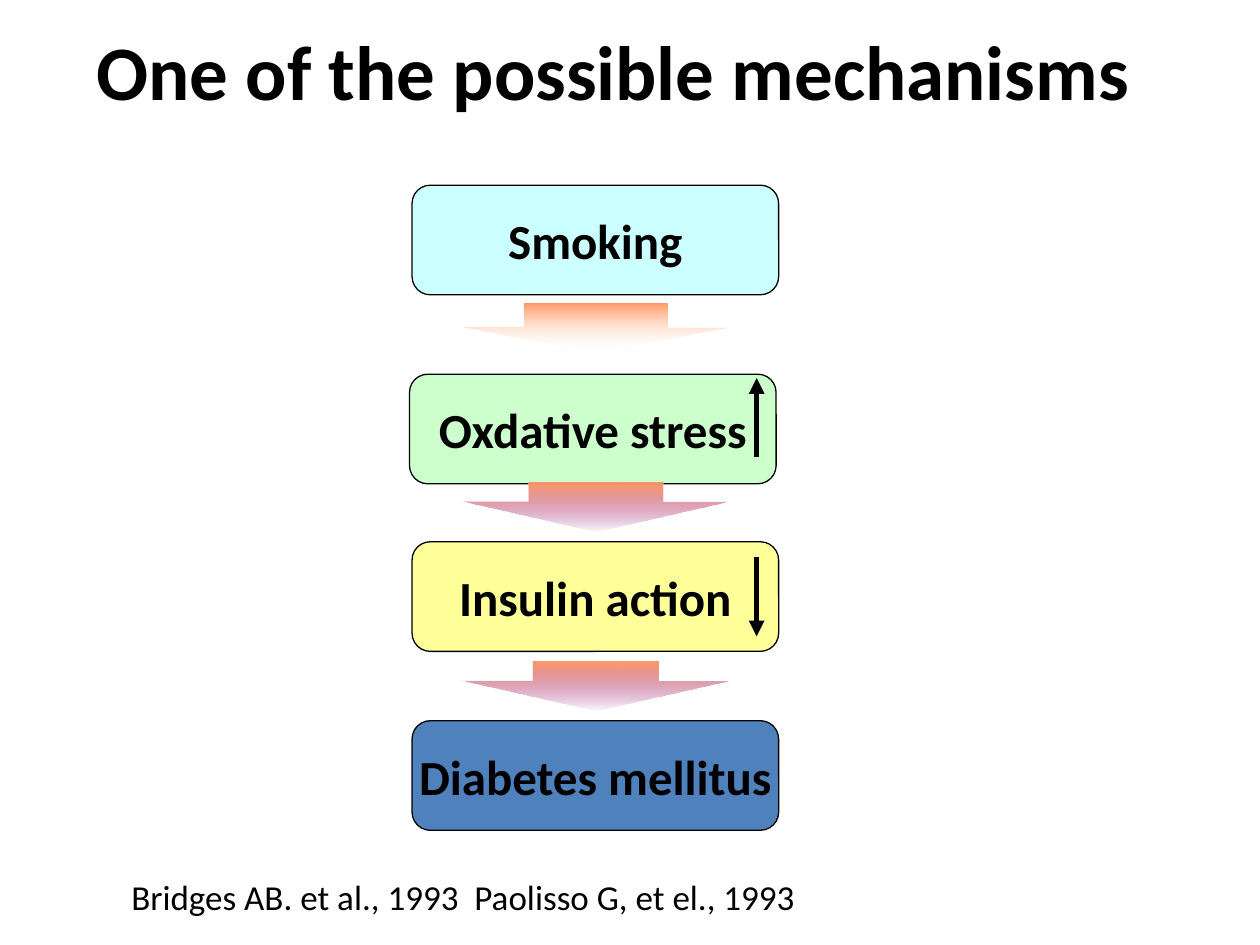
from pptx import Presentation, util as u
from pptx.dml.color import RGBColor
from pptx.enum import shapes, text
from pptx.oxml.ns import qn
from lxml import etree

W, H = 10, 7.5
COLORS = {
    "ink": "000000", "smoking": "CCFFFF", "stress": "CCFFCC", "insulin": "FFFF99",
    "diabetes": "4F81BD", "orange": "FF9966", "white": "FFFFFF", "purple": "800080",
}
STEPS = [
    ("Smoking", "smoking", 0, 0, None),
    ("Oxdative stress", "stress", -0.02, 1.5, (0.66, 0.03)),
    ("Insulin action", "insulin", 0, 2.83, (0.12, 0.75)),
    ("Diabetes mellitus", "diabetes", 0, 4.25, None),
]
ARROWS = [("white", 0.535, 0.524), ("purple", 0.5, 0.617), ("purple", 0.468, 0.612)]
BOX_H, ARROW_H, ARROW_TOP, ARROW_STEP = 0.87, 0.39, 0.94, 1.42


def rgb(name):
    return RGBColor.from_string(COLORS[name])


def inches(*values):
    return [u.Inches(v) for v in values]


def write(sp, words, size, bold, align):
    tf = sp.text_frame
    tf.vertical_anchor = text.MSO_ANCHOR.MIDDLE
    p = tf.paragraphs[0]
    p.alignment = align
    r = p.add_run()
    r.text = words
    r.font.name, r.font.size, r.font.bold = "Calibri", u.Pt(size), bold
    r.font.color.rgb = rgb("ink")
    return tf


def label(s, box, words, size, bold, align):
    sp = s.shapes.add_textbox(*inches(*box))
    tf = write(sp, words, size, bold, align)
    tf.word_wrap = True
    tf.margin_left = 0


def step_box(s, box, words, fill):
    sp = s.shapes.add_shape(shapes.MSO_SHAPE.ROUNDED_RECTANGLE, *inches(*box))
    sp.shadow.inherit = False
    sp.adjustments[0] = 0.167
    sp.fill.solid()
    sp.fill.fore_color.rgb = rgb(fill)
    sp.line.color.rgb = rgb("ink")
    sp.line.width = u.Pt(0.75)
    write(sp, words, 28, True, text.PP_ALIGN.CENTER).word_wrap = False


def trend_arrow(s, x, start, end):
    c = s.shapes.add_connector(shapes.MSO_CONNECTOR.STRAIGHT, *inches(x, start, x, end))
    c.line.color.rgb = rgb("ink")
    c.line.width = u.Pt(3)
    etree.SubElement(c.line._get_or_add_ln(), qn("a:tailEnd"), type="triangle")
    etree.SubElement(c._element.spPr, qn("a:effectLst"))


def flow_arrow(s, box, fade, shaft, head):
    sp = s.shapes.add_shape(shapes.MSO_SHAPE.DOWN_ARROW, *inches(*box))
    sp.shadow.inherit = False
    sp.adjustments[0], sp.adjustments[1] = shaft, head
    sp.line.fill.background()
    sp.fill.gradient()
    sp.fill.gradient_angle = 270
    for stop, (name, position) in zip(sp.fill.gradient_stops, [("orange", 0), (fade, 1)]):
        stop.color.rgb = rgb(name)
        stop.position = position
    clear = sp._element.spPr.findall(".//" + qn("a:srgbClr"))[-1]
    etree.SubElement(clear, qn("a:alpha"), val="0")


def flow(s, box):
    left, top, width, _ = box
    for words, fill, dx, dy, trend in STEPS:
        y = top + dy
        step_box(s, (left + dx, y, width, BOX_H), words, fill)
        if trend:
            start, end = (y + share * BOX_H * 1.15 for share in trend)
            trend_arrow(s, left + width * 0.94, start, end)
    arrow_w = width * 0.73
    for i, (fade, shaft, head) in enumerate(ARROWS):
        y = top + ARROW_TOP + i * ARROW_STEP
        flow_arrow(s, (left + (width - arrow_w) / 2, y, arrow_w, ARROW_H), fade, shaft, head)


def main():
    prs = Presentation()
    prs.slide_width, prs.slide_height = inches(W, H)
    s = prs.slides.add_slide(prs.slide_layouts[6])
    label(s, (0.067 * W, -0.01 * H, 0.85 * W, H / 6),
          "One of the possible mechanisms", 44, True, text.PP_ALIGN.CENTER)
    flow(s, (0.327 * W, 0.196 * H, 0.291 * W, 0.683 * H))
    label(s, (0.027 * W, 0.92 * H, 0.614 * W, 0.057 * H),
          "Bridges AB. et al., 1993  Paolisso G, et el., 1993", 20, False, text.PP_ALIGN.RIGHT)
    prs.save("out.pptx")


if __name__ == "__main__":
    main()
